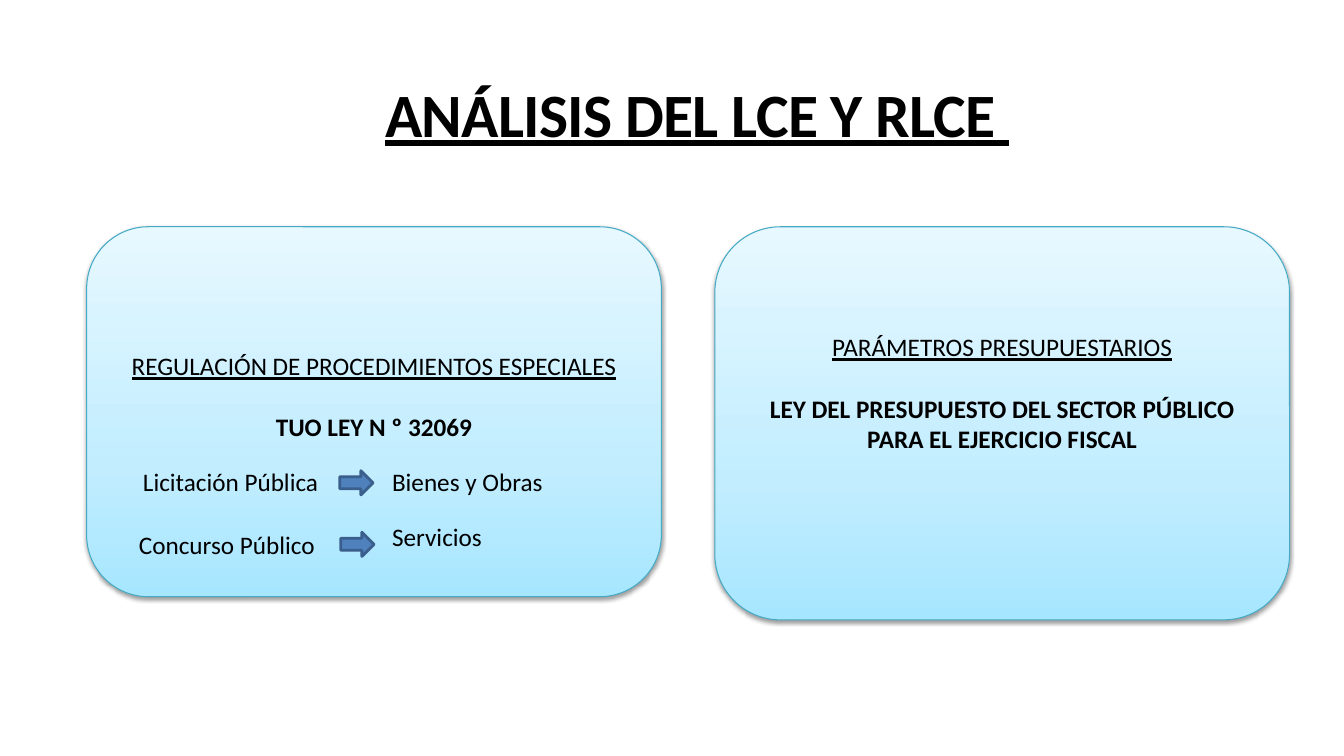
from dataclasses import dataclass

from lxml.etree import SubElement
from pptx import Presentation
from pptx.dml.color import RGBColor
from pptx.enum.shapes import MSO_SHAPE
from pptx.enum.text import MSO_ANCHOR, MSO_AUTO_SIZE, PP_ALIGN
from pptx.oxml.ns import qn
from pptx.util import Inches, Pt

BLACK = RGBColor(0x00, 0x00, 0x00)
CARD_LINE = RGBColor(0x46, 0xAA, 0xC5)
ARROW_FILL = RGBColor(0x4F, 0x81, 0xBD)
ARROW_LINE = RGBColor(0x3A, 0x5F, 0x8C)
CARD_STOPS = (
    (0, RGBColor(0xA7, 0xE6, 0xFF)),
    (35, RGBColor(0xC1, 0xED, 0xFF)),
    (100, RGBColor(0xE7, 0xF8, 0xFF)),
)


@dataclass(frozen=True)
class Card:
    left: float
    height: float
    heading: str
    law: str
    bottom_inset: float


@dataclass(frozen=True)
class Procedure:
    name: str
    name_left: float
    name_top: float
    arrow_left: float
    arrow_top: float
    scope: str
    scope_top: float
    scope_width: float


CARDS = (
    Card(0.86, 3.67, "REGULACIÓN DE PROCEDIMIENTOS ESPECIALES",
         "TUO LEY N º 32069", 0.36),
    Card(7.09, 3.9, "PARÁMETROS PRESUPUESTARIOS",
         "LEY DEL PRESUPUESTO DEL SECTOR PÚBLICO PARA EL EJERCICIO FISCAL", 0.66),
)
PROCEDURES = (
    Procedure("Licitación Pública", 1.32, 4.58, 3.37, 4.67, "Bienes y Obras", 4.58, 2),
    Procedure("Concurso Público", 1.28, 5.2, 3.38, 5.28, "Servicios", 5.12, 1.71),
)


def write(paragraph, text: str, *, size: float = 18, bold: bool = False,
          underline: bool = False, align=PP_ALIGN.LEFT, before: float = 0,
          tracking: float = 0) -> None:
    paragraph.alignment = align
    paragraph.space_before = Pt(before)
    run = paragraph.add_run()
    run.text = text
    font = run.font
    font.name = "Calibri"
    font.size = Pt(size)
    font.bold = bold
    font.underline = underline
    font.color.rgb = BLACK
    if tracking:
        font._element.set("spc", str(round(tracking * 100)))


def add_color(parent, color: RGBColor):
    return SubElement(parent, qn("a:srgbClr"), val=str(color))


def style_card(shape) -> None:
    # Three-stop gradient, running from the bottom up
    shape.fill.gradient()
    gradient = shape._element.spPr.find(qn("a:gradFill"))
    stops = gradient.find(qn("a:gsLst"))
    for stop in list(stops):
        stops.remove(stop)
    for position, color in CARD_STOPS:
        add_color(SubElement(stops, qn("a:gs"), pos=str(position * 1000)), color)
    gradient.find(qn("a:lin")).set("ang", str(270 * 60000))
    shape.line.color.rgb = CARD_LINE
    shape.line.width = Pt(0.75)

    # Soft shadow below the card
    shape.shadow.inherit = False
    effects = shape._element.spPr.find(qn("a:effectLst"))
    shadow = SubElement(effects, qn("a:outerShdw"), blurRad="40000", dist="20000",
                        dir=str(90 * 60000), rotWithShape="0")
    SubElement(add_color(shadow, BLACK), qn("a:alpha"), val="38000")


def add_card(slide, card: Card) -> None:
    shape = slide.shapes.add_shape(
        MSO_SHAPE.ROUNDED_RECTANGLE, Inches(card.left), Inches(2.25),
        Inches(5.7), Inches(card.height))
    style_card(shape)
    frame = shape.text_frame
    frame.word_wrap = True
    frame.vertical_anchor = MSO_ANCHOR.MIDDLE
    frame.margin_bottom = Inches(card.bottom_inset)
    write(frame.paragraphs[0], card.heading, underline=True, align=PP_ALIGN.CENTER)
    write(frame.add_paragraph(), card.law, bold=True, align=PP_ALIGN.CENTER, before=22)


def add_label(slide, text: str, left: float, top: float, width: float) -> None:
    label = slide.shapes.add_textbox(
        Inches(left), Inches(top), Inches(width), Inches(0.4))
    label.text_frame.word_wrap = True
    write(label.text_frame.paragraphs[0], text)


def add_procedure(slide, row: Procedure) -> None:
    add_label(slide, row.name, row.name_left, row.name_top, 2)
    arrow = slide.shapes.add_shape(
        MSO_SHAPE.RIGHT_ARROW, Inches(row.arrow_left), Inches(row.arrow_top),
        Inches(0.33), Inches(0.24))
    arrow.shadow.inherit = False
    arrow.fill.solid()
    arrow.fill.fore_color.rgb = ARROW_FILL
    arrow.line.color.rgb = ARROW_LINE
    arrow.line.width = Pt(2)
    add_label(slide, row.scope, 3.79, row.scope_top, row.scope_width)


def add_title(slide) -> None:
    title = slide.shapes.title
    title.left, title.top = Inches(2), Inches(0.75)
    title.width, title.height = Inches(9.83), Inches(1.41)
    frame = title.text_frame
    frame.auto_size = MSO_AUTO_SIZE.NONE
    frame.word_wrap = True
    frame.vertical_anchor = MSO_ANCHOR.TOP
    frame.margin_left = frame.margin_right = Inches(0)
    frame.margin_top = frame.margin_bottom = Inches(0)
    write(frame.paragraphs[0], "ANÁLISIS DEL LCE Y RLCE ", size=44, bold=True,
          underline=True, align=PP_ALIGN.CENTER, tracking=-0.5)


def main() -> None:
    deck = Presentation()
    deck.slide_width, deck.slide_height = Inches(13.33), Inches(7.5)
    slide = deck.slides.add_slide(deck.slide_layouts.get_by_name("Title Only"))
    add_title(slide)
    for card in CARDS:
        add_card(slide, card)
    for row in PROCEDURES:
        add_procedure(slide, row)
    deck.save("out.pptx")


if __name__ == "__main__":
    main()
